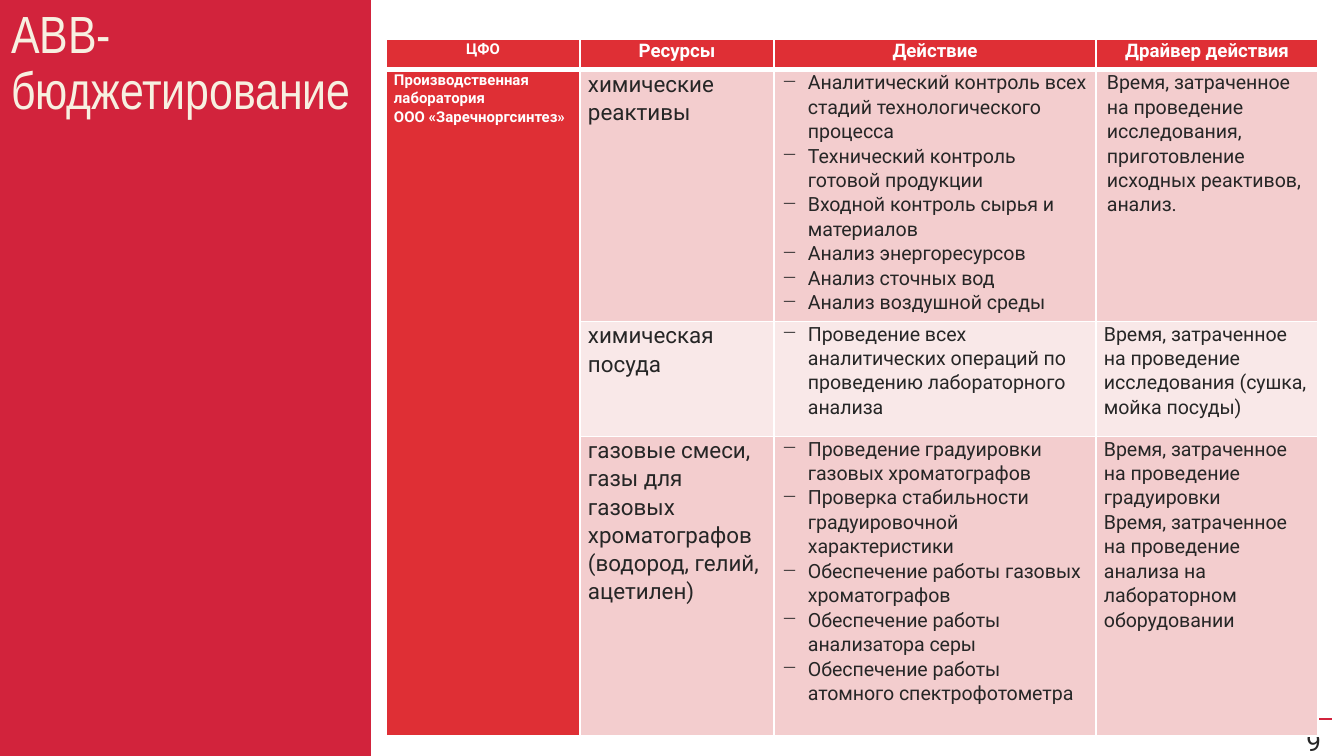
from lxml import etree
from pptx import Presentation
from pptx.dml.color import RGBColor
from pptx.enum.shapes import MSO_CONNECTOR, MSO_SHAPE
from pptx.enum.text import PP_ALIGN
from pptx.oxml.ns import qn
from pptx.util import Pt

LEFT, CENTER, RIGHT = PP_ALIGN.LEFT, PP_ALIGN.CENTER, PP_ALIGN.RIGHT
RECTANGLE, STRAIGHT = MSO_SHAPE.RECTANGLE, MSO_CONNECTOR.STRAIGHT
EMU_PER_PX = 914400 / 134.4
BULLET_INDENT = 26
CRIMSON, RED, CREAM = "D2233C", "DF2F35", "F7F0E1"
WHITE, INK, PINK, PALE = "FFFFFF", "262626", "F3CDCE", "F9E8E8"

HEADERS = ["ЦФО", "Ресурсы", "Действие", "Драйвер действия"]
CENTRE_NAME = ["Производственная лаборатория", "ООО «Заречноргсинтез»"]
RESOURCES = [
    (
        PINK,
        "химические реактивы",
        [
            "Аналитический контроль всех стадий технологического процесса",
            "Технический контроль готовой продукции",
            "Входной контроль сырья и материалов",
            "Анализ энергоресурсов",
            "Анализ сточных вод",
            "Анализ воздушной среды",
        ],
        ["Время, затраченное на проведение исследования, приготовление исходных реактивов, анализ."],
    ),
    (
        PALE,
        "химическая посуда",
        ["Проведение всех аналитических операций по проведению лабораторного анализа"],
        ["Время, затраченное на проведение исследования (сушка, мойка посуды)"],
    ),
    (
        PINK,
        "газовые смеси, газы для газовых хроматографов (водород, гелий, ацетилен)",
        [
            "Проведение градуировки газовых хроматографов",
            "Проверка стабильности градуировочной характеристики",
            "Обеспечение работы газовых хроматографов",
            "Обеспечение работы анализатора серы",
            "Обеспечение работы атомного спектрофотометра",
        ],
        [
            "Время, затраченное на проведение градуировки",
            "Время, затраченное на проведение анализа на лабораторном оборудовании",
        ],
    ),
]


def px(length):
    return round(length * EMU_PER_PX)


def rgb(color):
    return RGBColor.from_string(color)


def set_values(target, values):
    for name, value in values.items():
        setattr(target, name, value)


class SlideBuilder:
    """Holds the text style and the slide being filled."""

    def __init__(self, slide, font="Roboto", line_spacing=1.07):
        self.slide = slide
        self.font = font
        self.line_spacing = line_spacing

    def rectangle(self, left, top, width, height, color):
        shape = self.slide.shapes.add_shape(RECTANGLE, *map(px, (left, top, width, height)))
        shape.shadow.inherit = False
        shape.fill.solid()
        shape.fill.fore_color.rgb = rgb(color)
        shape.line.fill.background()

    def line(self, start, end, color, width):
        connector = self.slide.shapes.add_connector(STRAIGHT, *map(px, start + end))
        connector.line.color.rgb = rgb(color)
        connector.line.width = Pt(width)
        etree.SubElement(connector._element.spPr, qn("a:effectLst"))

    def paragraphs(self, frame, texts, size, color, bold=False, align=LEFT, font=None,
                   spacing=None, bullet=None, indent=0):
        for index, text in enumerate(texts):
            paragraph = frame.add_paragraph() if index else frame.paragraphs[0]
            paragraph.text = text
            set_values(paragraph, {
                "alignment": align,
                "line_spacing": spacing or self.line_spacing,
            })
            properties = paragraph._p.get_or_add_pPr()
            properties.set("marL", str(px(indent)))
            properties.set("indent", str(px(-indent if bullet else 0)))
            if bullet:
                etree.SubElement(properties, qn("a:buChar"), char=bullet)
            run_font = paragraph.runs[0].font
            set_values(run_font, {"name": font or self.font, "size": Pt(size), "bold": bold})
            run_font.color.rgb = rgb(color)

    def text_box(self, left, top, width, height, text, size, color, margins, **style):
        box = self.slide.shapes.add_textbox(*map(px, (left, top, width, height)))
        frame = box.text_frame
        frame.word_wrap = True
        sides = ("margin_left", "margin_top", "margin_right", "margin_bottom")
        set_values(frame, dict(zip(sides, map(px, margins))))
        self.paragraphs(frame, [text], size, color, **style)

    def table(self, left, top, widths, heights):
        frame = self.slide.shapes.add_table(
            len(heights), len(widths),
            *map(px, (left, top, sum(widths), sum(heights))))
        table = frame.table
        for column, width in zip(table.columns, widths):
            column.width = px(width)
        for row, height in zip(table.rows, heights):
            row.height = px(height)
        return table

    def cell(self, cell, fill, texts, size, color, bottom=1, **style):
        set_values(cell, {"margin_left": px(8), "margin_right": px(8),
                          "margin_top": 0, "margin_bottom": 0})
        if texts:
            self.paragraphs(cell.text_frame, texts, size, color, **style)
        properties = cell._tc.get_or_add_tcPr()
        for side, width in (("L", 1), ("R", 1), ("T", 1), ("B", bottom)):
            border = etree.SubElement(properties, qn(f"a:ln{side}"), w=str(Pt(width)))
            border_fill = etree.SubElement(border, qn("a:solidFill"))
            etree.SubElement(border_fill, qn("a:srgbClr"), val=WHITE)
        cell.fill.solid()
        cell.fill.fore_color.rgb = rgb(fill)


def fill_table(builder, table):
    for column, header in enumerate(HEADERS):
        builder.cell(table.cell(0, column), RED, [header], 10 if column else 8, WHITE,
                     bottom=3, bold=True, align=CENTER)
    table.cell(1, 0).merge(table.cell(len(RESOURCES), 0))
    for row, (fill, resource, actions, drivers) in enumerate(RESOURCES, 1):
        builder.cell(table.cell(row, 0), RED, CENTRE_NAME if row == 1 else [], 8, WHITE, bold=True)
        builder.cell(table.cell(row, 1), fill, [resource], 12, INK)
        builder.cell(table.cell(row, 2), fill, actions, 10.5, INK,
                     bullet="−", indent=BULLET_INDENT)
        builder.cell(table.cell(row, 3), fill, drivers, 10.5, INK, indent=3 if row == 1 else 0)


def main():
    presentation = Presentation()
    set_values(presentation, {"slide_width": px(1344), "slide_height": px(756)})
    builder = SlideBuilder(presentation.slides.add_slide(presentation.slide_layouts[6]))
    builder.line((1202, 719), (1332, 719), CRIMSON, 1.5)
    builder.text_box(1202, 719, 131, 31, "9", 14, INK, (12, 6, 12, 6), align=RIGHT, spacing=1.0)
    builder.rectangle(0, 0, 371, 756, CRIMSON)
    builder.text_box(0, 8, 366, 220, "АВВ-бюджетирование", 28, CREAM, (11, 0, 0, 0),
                     font="Arial Narrow", spacing=0.9)
    fill_table(builder, builder.table(386, 39, [194, 194, 322, 222], [31, 251, 115, 300]))
    presentation.save("out.pptx")


if __name__ == "__main__":
    main()
